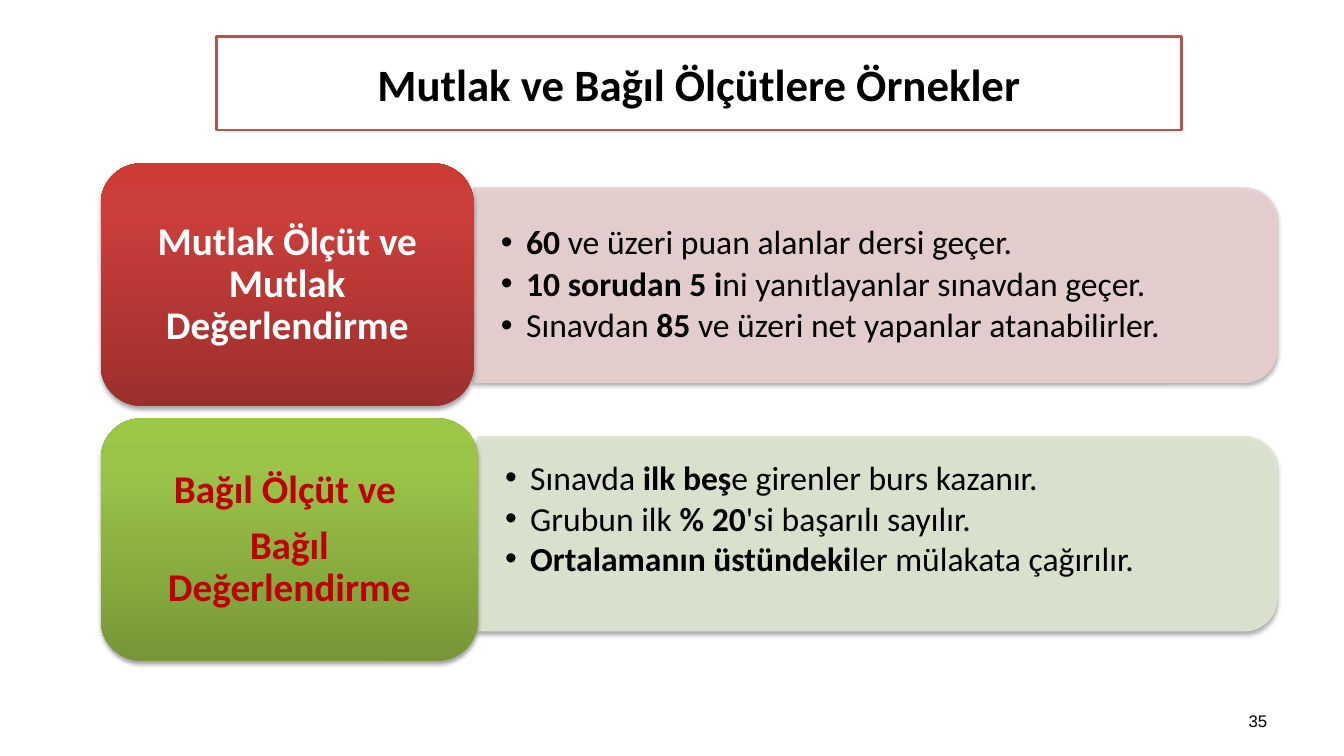
from copy import deepcopy
from dataclasses import dataclass

from lxml import etree
from pptx import Presentation
from pptx.dml.color import RGBColor
from pptx.enum.shapes import MSO_SHAPE
from pptx.enum.text import MSO_ANCHOR, MSO_AUTO_SIZE, PP_ALIGN
from pptx.oxml.ns import qn
from pptx.util import Emu, Inches, Pt

CARD, PANEL = MSO_SHAPE.ROUNDED_RECTANGLE, MSO_SHAPE.ROUND_2_SAME_RECTANGLE
MIDDLE = MSO_ANCHOR.MIDDLE
CENTER, RIGHT, LEFT = PP_ALIGN.CENTER, PP_ALIGN.RIGHT, PP_ALIGN.LEFT

WIDTH, HEIGHT = Inches(13.33), Inches(7.5)
COLORS = {
    "black": "000000", "white": "FFFFFF", "label_red": "C00000", "title_line": "C0504D",
    "pink": "E8D0D0", "sage": "DEE7D1",
    "red_dark": "9C2F2D", "red_mid": "CB3E3A", "red_light": "CE3B37",
    "green_dark": "779737", "green_mid": "9BC348", "green_light": "9DC746",
}
STOPS = (0, 0.8, 1)

# Horizontal and vertical values are percentages of the slide's width and height.
CARD_X, CARD_H = 7.5, 32.13
PANEL_RIGHT, PANEL_H = 95, 25.73
LIST_RIGHT, LIST_H = 94.28, 23.2

Run = tuple[str, bool]


@dataclass
class Topic:
    label: list[str]
    label_color: str
    gradient: tuple[str, str, str]
    panel_color: str
    card_y: float
    card_w: float
    panel_y: float
    items: list[list[Run]]
    line_spacing: float
    space_after: float
    bottom_inset: float


TOPICS = [
    Topic(["Mutlak Ölçüt ve Mutlak Değerlendirme"], "white",
          ("red_dark", "red_mid", "red_light"), "pink", 21.6, 27.75, 24.87,
          [[("60 ", True), ("ve üzeri puan alanlar dersi geçer.", False)],
           [("10 sorudan 5 i", True), ("ni yanıtlayanlar sınavdan geçer.", False)],
           [("Sınavdan ", False), ("85", True),
            (" ve üzeri net yapanlar atanabilirler.", False)]],
          0.9, 3.6, 0.14),
    Topic(["Bağıl Ölçüt ve ", "Bağıl Değerlendirme"], "label_red",
          ("green_dark", "green_mid", "green_light"), "sage", 55.33, 28.05, 57.73,
          [[("Sınavda ", False), ("ilk beş", True), ("e girenler burs kazanır.", False)],
           [("Grubun ilk ", False), ("% 20", True), ("'si başarılı sayılır.", False)],
           [("Ortalamanın üstündeki", True), ("ler mülakata çağırılır.", False)]],
          1.0, 0, 0.46),
]


def rgb(name: str) -> RGBColor:
    return RGBColor.from_string(COLORS[name])


def box(x: float, y: float, w: float, h: float) -> tuple[Emu, Emu, Emu, Emu]:
    """Turn percentages of the slide into lengths."""
    return (Emu(int(WIDTH * x / 100)), Emu(int(HEIGHT * y / 100)),
            Emu(int(WIDTH * w / 100)), Emu(int(HEIGHT * h / 100)))


def place(sp, x: float, y: float, w: float, h: float) -> None:
    sp.left, sp.top, sp.width, sp.height = box(x, y, w, h)


def add_paragraph(tf, runs: list[Run], size: float, color: str, align=LEFT,
                  font: str = "Calibri", spacing: float = 1.0, after: float = 0):
    p = tf.paragraphs[0]
    if p.runs:
        p = tf.add_paragraph()
    p.alignment, p.line_spacing = align, spacing
    p.space_before, p.space_after = Pt(0), Pt(after)
    for text, bold in runs:
        r = p.add_run()
        r.text = text
        r.font.name, r.font.size, r.font.bold = font, Pt(size), bold
        r.font.color.rgb = rgb(color)
    return p


def set_frame(tf, side: float, top: float, bottom: float) -> None:
    tf.word_wrap, tf.auto_size, tf.vertical_anchor = True, MSO_AUTO_SIZE.NONE, MIDDLE
    tf.margin_left = tf.margin_right = Inches(side)
    tf.margin_top, tf.margin_bottom = Inches(top), Inches(bottom)


def add_soft_shadow(sp) -> None:
    sp.shadow.inherit = False
    effects = sp.element.spPr.find(qn("a:effectLst"))
    shadow = etree.SubElement(effects, qn("a:outerShdw"), blurRad=str(Pt(3.1)),
                              dist=str(Pt(1.8)), dir="5400000", rotWithShape="0")
    color = etree.SubElement(shadow, qn("a:srgbClr"), val=COLORS["black"])
    etree.SubElement(color, qn("a:alpha"), val="35000")


def add_panel(s, topic: Topic, x: float):
    """Draw the pale panel, turned so that its rounded side faces right."""
    left, top, w, h = box(x, topic.panel_y, PANEL_RIGHT - x, PANEL_H)
    sp = s.shapes.add_shape(PANEL, left + (w - h) // 2, top + (h - w) // 2, h, w)
    sp.rotation = 90
    sp.fill.solid()
    sp.fill.fore_color.rgb = sp.line.color.rgb = rgb(topic.panel_color)
    sp.line.width = Pt(0.75)
    for color in sp.element.spPr.iter(qn("a:srgbClr")):
        etree.SubElement(color, qn("a:alpha"), val="90000")
    add_soft_shadow(sp)
    return sp


def add_card(s, topic: Topic) -> None:
    sp = s.shapes.add_shape(CARD, *box(CARD_X, topic.card_y, topic.card_w, CARD_H))
    sp.fill.gradient()
    sp.fill.gradient_angle = 90
    stop_list = sp.element.spPr.find(f".//{qn('a:gsLst')}")
    stop_list.append(deepcopy(stop_list[0]))
    for stop, position, color in zip(sp.fill.gradient_stops, STOPS, topic.gradient):
        stop.position, stop.color.rgb = position, rgb(color)
    sp.line.fill.background()
    add_soft_shadow(sp)
    set_frame(sp.text_frame, 0.24, 0.18, 0.18)
    for text in topic.label:
        add_paragraph(sp.text_frame, [(text, True)], 28, topic.label_color, CENTER,
                      spacing=0.9, after=9.8)


def fill_list(body, topic: Topic, x: float) -> None:
    place(body, x, topic.panel_y + (PANEL_H - LIST_H) / 2, LIST_RIGHT - x, LIST_H)
    set_frame(body.text_frame, 0.27, 0.14, topic.bottom_inset)
    for runs in topic.items:
        p = add_paragraph(body.text_frame, runs, 24, "black",
                          spacing=topic.line_spacing, after=topic.space_after)
        pPr = p._p.get_or_add_pPr()
        pPr.set("marL", str(Inches(0.25)))
        pPr.set("indent", str(Inches(-0.25)))


def main() -> None:
    prs = Presentation()
    prs.slide_width, prs.slide_height = WIDTH, HEIGHT
    s = prs.slides.add_slide(prs.slide_layouts[3])

    title = s.shapes.title
    place(title, 16.13, 4.8, 71.79, 12.4)
    title.line.color.rgb, title.line.width = rgb("title_line"), Pt(2)
    set_frame(title.text_frame, 0.1, 0.05, 0.05)
    add_paragraph(title.text_frame, [("Mutlak ve Bağıl Ölçütlere Örnekler", True)],
                  32, "black", CENTER)

    for body, topic in zip((s.placeholders[1], s.placeholders[2]), TOPICS):
        x = CARD_X + topic.card_w
        panel = add_panel(s, topic, x)
        fill_list(body, topic, x)
        panel.element.addnext(body.element)
        add_card(s, topic)

    number = s.shapes.add_textbox(*box(71.7, 92.67, 23.33, 5.33))
    set_frame(number.text_frame, 0.1, 0.05, 0.05)
    add_paragraph(number.text_frame, [("35", False)], 12, "black", RIGHT, "Arial")

    prs.save("out.pptx")


if __name__ == "__main__":
    main()
